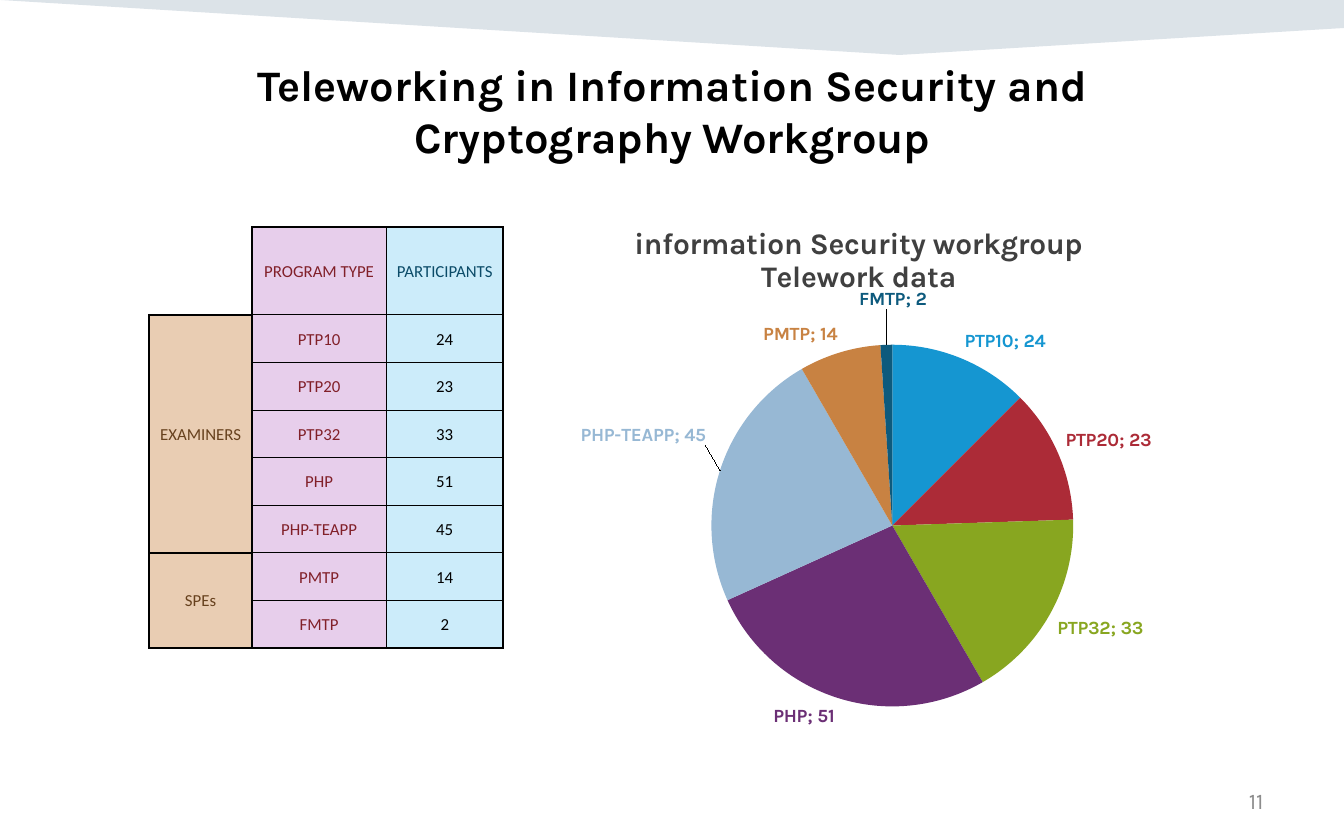
from typing import NamedTuple

from lxml import etree
from pptx import Presentation
from pptx.chart.data import CategoryChartData
from pptx.dml.color import RGBColor
from pptx.enum.chart import XL_CHART_TYPE, XL_LABEL_POSITION
from pptx.enum.dml import MSO_THEME_COLOR
from pptx.enum.text import MSO_ANCHOR, MSO_AUTO_SIZE, PP_ALIGN
from pptx.oxml import parse_xml
from pptx.oxml.ns import nsdecls, qn
from pptx.util import Cm, Pt

CENTER, RIGHT = PP_ALIGN.CENTER, PP_ALIGN.RIGHT
TOP, MIDDLE = MSO_ANCHOR.TOP, MSO_ANCHOR.MIDDLE
OUTSIDE_END = XL_LABEL_POSITION.OUTSIDE_END
HEADING_FONT, TABLE_FONT = "Karla", "Calibri"
THICK, THIN = 1, 0.5


class Program(NamedTuple):
    name: str
    participants: int
    color: str
    label_shift: tuple[float, float] | None = None


class Group(NamedTuple):
    name: str
    first_row: int
    last_row: int


class Column(NamedTuple):
    width: float
    fill: str
    color: str


PROGRAMS = [
    Program("PTP10", 24, "1596D1"),
    Program("PTP20", 23, "AC2B37"),
    Program("PTP32", 33, "88A620"),
    Program("PHP", 51, "6B2F75"),
    Program("PHP-TEAPP", 45, "97B8D4", (-0.01, -0.04)),
    Program("PMTP", 14, "C88242"),
    Program("FMTP", 2, "0D5A7D", (0.01, -0.05)),
]
GROUPS = [Group("EXAMINERS", 1, 5), Group("SPEs", 6, 7)]
COLUMNS = [
    Column(1.94, "E9CDB3", "67411E"),
    Column(2.54, "E7CEEB", "812029"),
    Column(2.21, "CCECFA", "000000"),
]
PARTICIPANTS_HEADER_COLOR = "0B4B68"


def rgb(value: str) -> RGBColor:
    return RGBColor.from_string(value)


def set_font(font, name: str, size: float, color: str, bold: bool = False) -> None:
    font.name, font.size, font.bold = name, Pt(size), bold
    font.color.rgb = rgb(color)


def add_banner(s) -> None:
    """Draw the pale folded band along the top edge."""
    builder = s.shapes.build_freeform(0, 0)
    builder.add_line_segments(
        [(Cm(25.4), 0), (Cm(25.4), Cm(0.53)), (Cm(17), Cm(1.04))])
    sp = builder.convert_to_shape()
    sp.shadow.inherit = False
    sp.line.fill.background()
    sp.fill.solid()
    sp.fill.fore_color.rgb = rgb("164469")
    color = sp.fill._xPr.find(qn("a:solidFill"))[0]
    etree.SubElement(color, qn("a:alpha"), val="15000")


def set_borders(cell, **widths: float) -> None:
    """Set the L, R, T and B borders in points; zero hides a border."""
    tcPr = cell._tc.get_or_add_tcPr()
    for side, width in widths.items():
        paint = ('<a:solidFill><a:srgbClr val="000000"/></a:solidFill>'
                 if width else "<a:noFill/>")
        tcPr.append(parse_xml(
            f'<a:ln{side} {nsdecls("a")} w="{Pt(width)}">{paint}</a:ln{side}>'))


def write_cell(cell, text: str, color: str) -> None:
    cell.vertical_anchor = MIDDLE
    cell.margin_left = cell.margin_right = cell.margin_top = Cm(0.03)
    cell.margin_bottom = 0
    p = cell.text_frame.paragraphs[0]
    p.text = text
    p.alignment = CENTER
    set_font(p.font, TABLE_FONT, 9, color)


def add_program_table(s) -> None:
    last = len(PROGRAMS)
    table = s.shapes.add_table(
        last + 1, len(COLUMNS), Cm(2.82), Cm(4.29), Cm(6.69), Cm(7.96)).table
    table.first_row = table.horz_banding = False
    for i, row in enumerate(table.rows):
        row.height = Cm(0.9 if i else 1.66)

    for c, column in enumerate(COLUMNS):
        table.columns[c].width = Cm(column.width)
        for r in range(last + 1):
            cell = table.cell(r, c)
            if c == 0:
                edge = THICK if r else 0
                set_borders(cell, L=edge, R=THICK, T=edge, B=THICK)
            else:
                set_borders(cell, L=THICK if c == 1 else THIN,
                            R=THICK if c == 2 else THIN,
                            T=THIN if r else THICK,
                            B=THICK if r == last else THIN)
            if r == c == 0:
                cell.fill.background()
            else:
                cell.fill.solid()
                cell.fill.fore_color.rgb = rgb(column.fill)

    write_cell(table.cell(0, 1), "PROGRAM TYPE", COLUMNS[1].color)
    write_cell(table.cell(0, 2), "PARTICIPANTS", PARTICIPANTS_HEADER_COLOR)
    for r, program in enumerate(PROGRAMS, 1):
        write_cell(table.cell(r, 1), program.name, COLUMNS[1].color)
        write_cell(table.cell(r, 2), str(program.participants), COLUMNS[2].color)
    for group in GROUPS:
        cell = table.cell(group.first_row, 0)
        cell.merge(table.cell(group.last_row, 0))
        write_cell(cell, group.name, COLUMNS[0].color)


def manual_layout(**values):
    """Build a c:layout element from fractions of the chart area."""
    target = '<c:layoutTarget val="inner"/>' if "w" in values else ""
    modes = '<c:xMode val="edge"/><c:yMode val="edge"/>' if values.pop("edge", False) else ""
    sizes = "".join(f'<c:{k} val="{v}"/>' for k, v in values.items())
    return parse_xml(f'<c:layout {nsdecls("c")}><c:manualLayout>{target}{modes}'
                     f'{sizes}</c:manualLayout></c:layout>')


def add_telework_pie(s) -> None:
    data = CategoryChartData()
    data.categories = [program.name for program in PROGRAMS]
    data.add_series("Series 1", [program.participants for program in PROGRAMS])
    chart = s.shapes.add_chart(XL_CHART_TYPE.PIE, Cm(9.88), Cm(3.76),
                               Cm(12.7), Cm(10.41), data).chart
    chart.has_legend = False
    set_font(chart.font, HEADING_FONT, 10, "000000")

    tf = chart.chart_title.text_frame
    tf.text = "information Security workgroup\nTelework data"
    for p in tf.paragraphs:
        set_font(p.font, HEADING_FONT, 16, "404040", bold=True)
    title = chart.chart_title._element
    for old in title.findall(qn("c:layout")):
        title.remove(old)
    title.find(qn("c:tx")).addnext(manual_layout(edge=True, x=0.16, y=0.04))

    area = chart._chartSpace.chart.plotArea
    for old in area.findall(qn("c:layout")):
        area.remove(old)
    area.insert(0, manual_layout(edge=True, x=0.28, y=0.265, w=0.54, h=0.657))

    plot = chart.plots[0]
    plot.vary_by_categories = True
    series = plot.series[0]
    labels = series.data_labels
    labels.show_value = labels.show_category_name = True
    labels.show_percentage = False
    labels.position = OUTSIDE_END
    for i, program in enumerate(PROGRAMS):
        point = series.points[i]
        point.format.fill.solid()
        point.format.fill.fore_color.rgb = rgb(program.color)
        point.format.line.fill.background()
        label = point.data_label
        set_font(label.font, HEADING_FONT, 10, program.color, bold=True)
        label.position = OUTSIDE_END
        dLbl = label._dLbl
        dLbl.find(qn("c:showCatName")).set("val", "1")
        dLbl.find(qn("c:showVal")).set("val", "1")
        if program.label_shift:
            x, y = program.label_shift
            dLbl.find(qn("c:idx")).addnext(manual_layout(x=x, y=y))


def add_title(s) -> None:
    sp = s.shapes.title
    sp.left, sp.top, sp.width, sp.height = Cm(3.84), Cm(0.97), Cm(17.73), Cm(2.26)
    tf = sp.text_frame
    tf.text = "Teleworking in Information Security and Cryptography Workgroup"
    tf.word_wrap = True
    tf.auto_size = MSO_AUTO_SIZE.NONE
    tf.vertical_anchor = TOP
    p = tf.paragraphs[0]
    p.alignment = CENTER
    set_font(p.font, HEADING_FONT, 23.3, "000000", bold=True)


def add_page_number(s, number: int) -> None:
    tf = s.shapes.add_textbox(Cm(18.21), Cm(14.71), Cm(5.92), Cm(0.84)).text_frame
    tf.word_wrap = True
    tf.vertical_anchor = MIDDLE
    p = tf.paragraphs[0]
    p.text = str(number)
    p.alignment = RIGHT
    set_font(p.font, HEADING_FONT, 12, "8C8C8C")


def main() -> None:
    prs = Presentation()
    prs.slide_width, prs.slide_height = Cm(25.4), Cm(15.88)
    s = prs.slides.add_slide(prs.slide_layouts[5])
    s.background.fill.solid()
    s.background.fill.fore_color.theme_color = MSO_THEME_COLOR.BACKGROUND_1
    add_banner(s)
    add_program_table(s)
    add_telework_pie(s)
    add_title(s)
    add_page_number(s, 11)
    prs.save("out.pptx")


if __name__ == "__main__":
    main()
